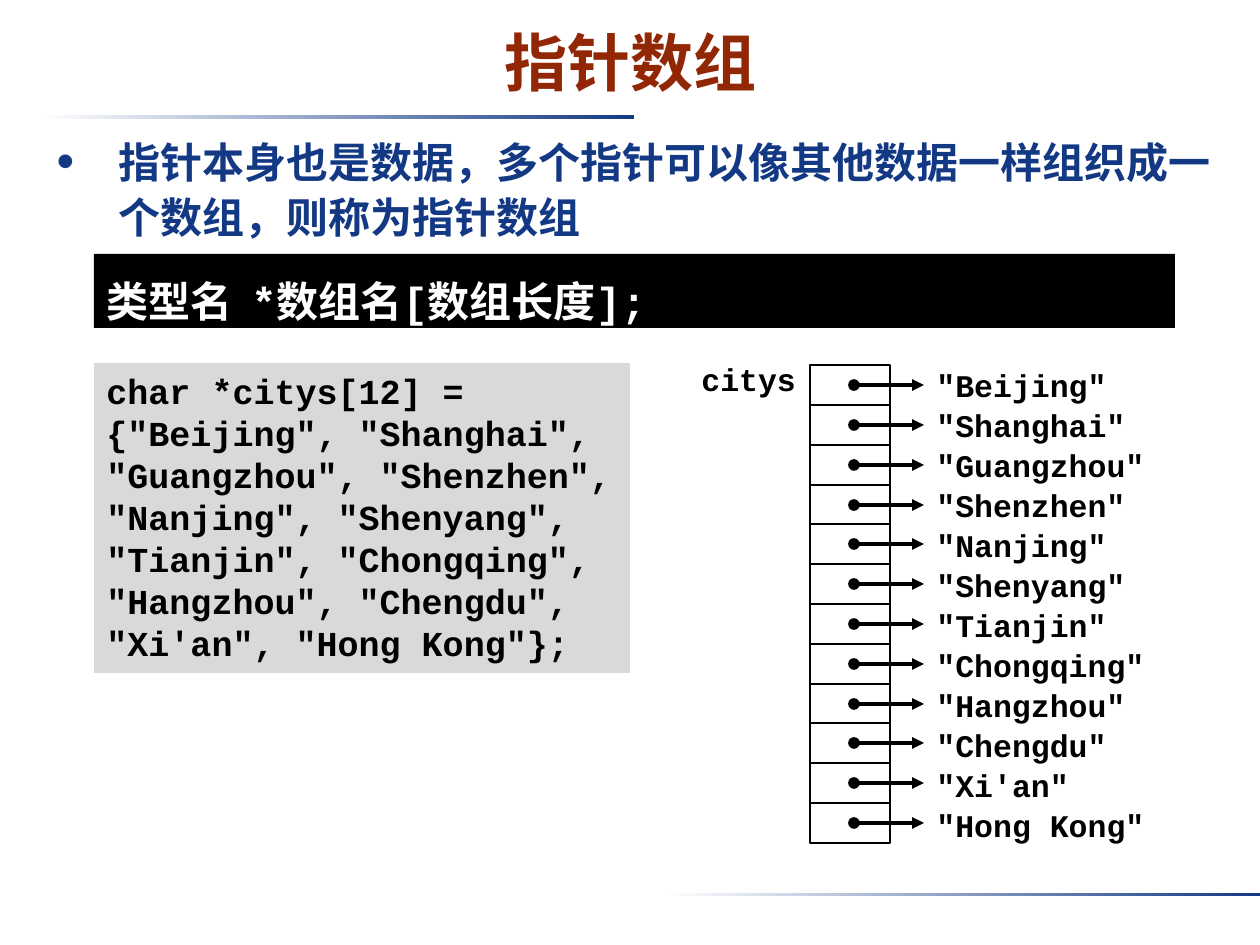
from lxml.etree import SubElement
from pptx import Presentation
from pptx.dml.color import RGBColor
from pptx.enum.shapes import MSO_CONNECTOR, MSO_SHAPE
from pptx.enum.text import MSO_ANCHOR as ANCHOR, MSO_AUTO_SIZE, PP_ALIGN as ALIGN
from pptx.oxml.ns import qn
from pptx.util import Pt

PX = 914400 / 126
BLACK = RGBColor(0x00, 0x00, 0x00)
WHITE = RGBColor(0xFF, 0xFF, 0xFF)
GREY = RGBColor(0xD9, 0xD9, 0xD9)
NAVY = RGBColor(0x13, 0x39, 0x84)
RUST = RGBColor(0x92, 0x27, 0x06)
CODE = "Courier New"
CITIES = ["Beijing", "Shanghai", "Guangzhou", "Shenzhen", "Nanjing", "Shenyang",
          "Tianjin", "Chongqing", "Hangzhou", "Chengdu", "Xi'an", "Hong Kong"]


def px(*lengths):
    """Turn pixel lengths into EMU."""
    return [round(length * PX) for length in lengths]


def write(shape, text, size, color=BLACK, font=CODE, align=ALIGN.LEFT,
          anchor=ANCHOR.TOP, spacing=1.0, wrap=True, bullet=None):
    frame = shape.text_frame
    frame.auto_size = MSO_AUTO_SIZE.NONE
    frame.word_wrap = wrap
    frame.vertical_anchor = anchor
    paragraph = frame.paragraphs[0]
    paragraph.alignment = align
    paragraph.line_spacing = spacing
    paragraph.space_before = Pt(0)
    if bullet:
        props = paragraph._p.get_or_add_pPr()
        indent, = px(62)
        props.set("marL", str(indent))
        props.set("indent", str(-indent))
        SubElement(props, qn("a:buSzPct"), val="120000")
        SubElement(props, qn("a:buFont"), typeface="Arial")
        SubElement(props, qn("a:buChar"), char=bullet)
    run = paragraph.add_run()
    run.text = text
    run.font.name = font
    run.font.size = Pt(size)
    run.font.bold = True
    run.font.color.rgb = color


prs = Presentation()
prs.slide_width, prs.slide_height = px(1260, 945)
slide = prs.slides.add_slide(prs.slide_layouts[1])
shapes = slide.shapes

# Title and body
title = shapes.title
title.left, title.top, title.width, title.height = px(95, 16, 1071, 88)
write(title, "指针数组", 36, RUST, "Arial", ALIGN.CENTER, ANCHOR.MIDDLE)
title.text_frame.margin_top, title.text_frame.margin_bottom = px(8, 6)

body = slide.placeholders[1]
body.left, body.top, body.width, body.height = px(44, 125, 1181, 149)
write(body, "指针本身也是数据，多个指针可以像其他数据一样组织成一个数组，则称为指针数组",
      24, NAVY, "Arial", spacing=1.1, bullet="•")

# Fading rules under the title and at the foot
for left, top in [(39, 115), (665, 893)]:
    rule = shapes.add_shape(MSO_SHAPE.RECTANGLE, *px(left, top, 595, 4 if top < 500 else 3))
    rule.shadow.inherit = False
    rule.line.fill.background()
    rule.fill.gradient()
    rule.fill.gradient_angle = 0
    for stop, color, position in zip(rule.fill.gradient_stops, (WHITE, NAVY), (0, 1)):
        stop.color.rgb = color
        stop.position = position

# Syntax and example panels
initializer = ", ".join(f'"{city}"' for city in CITIES)
for top, width, height, fill, text, size, color, spacing in [
    (254, 1081, 74, BLACK, "类型名  *数组名[数组长度];", 24, WHITE, 1.3),
    (363, 536, 310, GREY, f"char *citys[12] = {{{initializer}}};", 20, BLACK, 1.0),
]:
    panel = shapes.add_shape(MSO_SHAPE.RECTANGLE, *px(94, top, width, height))
    panel.shadow.inherit = False
    panel.fill.solid()
    panel.fill.fore_color.rgb = fill
    panel.line.fill.background()
    write(panel, text, size, color, spacing=spacing)

# Pointer array: one cell, arrow and string per city
ARRAY_TOP, ARRAY_HEIGHT = 365, 478
edges = [ARRAY_TOP + round(i * ARRAY_HEIGHT / len(CITIES)) for i in range(len(CITIES) + 1)]
for top, bottom in zip(edges, edges[1:]):
    cell = shapes.add_shape(MSO_SHAPE.RECTANGLE, *px(810, top, 80, bottom - top))
    cell.shadow.inherit = False
    cell.fill.solid()
    cell.fill.fore_color.rgb = WHITE
    cell.line.color.rgb = BLACK
    cell.line.width = Pt(1.5)

    middle = top + 20
    pointer = shapes.add_connector(MSO_CONNECTOR.STRAIGHT, *px(854, middle, 924, middle))
    pointer.line.color.rgb = BLACK
    pointer.line.width = Pt(2.25)
    stroke = pointer.line._get_or_add_ln()
    SubElement(stroke, qn("a:headEnd"), type="oval")
    SubElement(stroke, qn("a:tailEnd"), type="triangle")
    SubElement(pointer._element.spPr, qn("a:effectLst"))

labels = [(924, 360 + 40 * i, f'"{city}"') for i, city in enumerate(CITIES)]
for left, top, text in labels + [(689, 354, "citys")]:
    label = shapes.add_textbox(*px(left, top, 26 + 19 * len(text), 50))
    write(label, text, 18, wrap=False)

prs.save("out.pptx")
